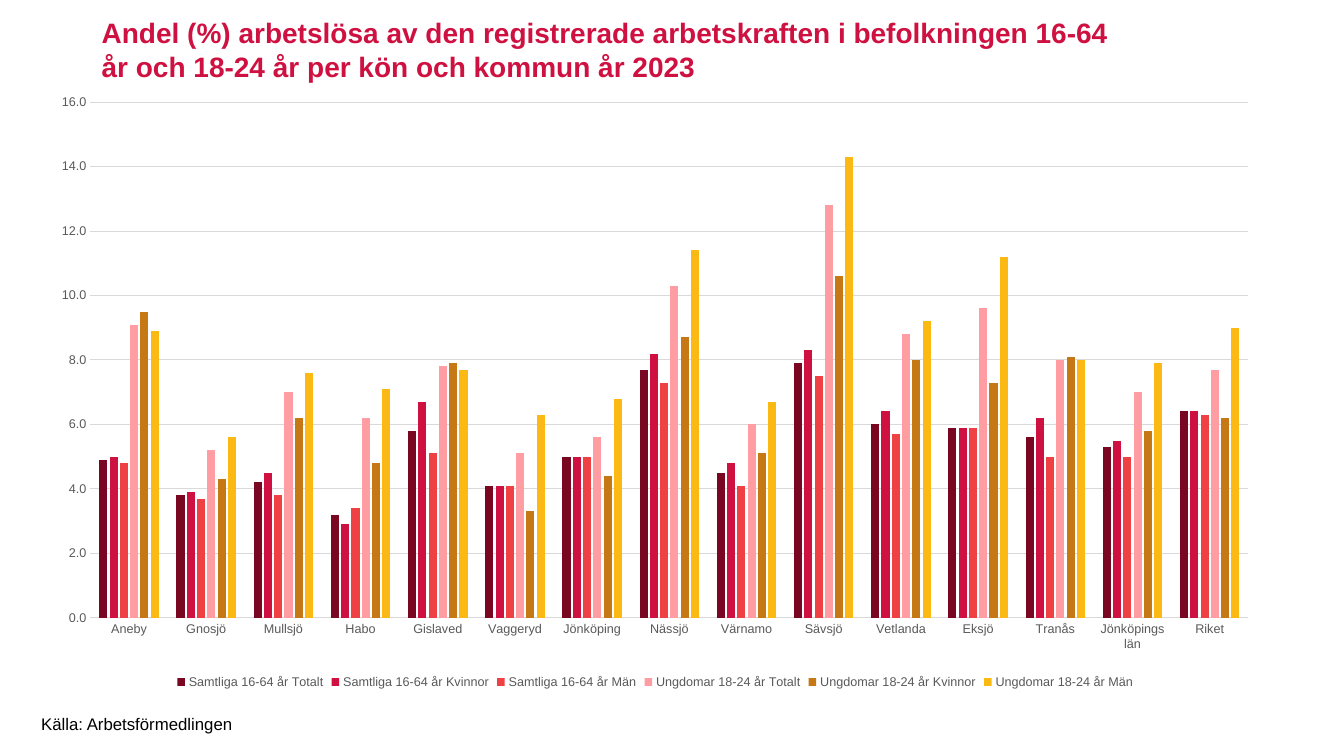
import pptx
import pptx.chart.data
import pptx.dml.color
import pptx.enum.chart
import pptx.enum.text
import pptx.util

Pt = pptx.util.Pt
RGBColor = pptx.dml.color.RGBColor

FONT = "Arial"
CRIMSON = RGBColor(0xCE, 0x11, 0x41)
BLACK = RGBColor(0x00, 0x00, 0x00)
LABEL_GREY = RGBColor(0x59, 0x59, 0x59)
LINE_GREY = RGBColor(0xD9, 0xD9, 0xD9)
WINE = RGBColor(0x79, 0x07, 0x21)
RED = RGBColor(0xEF, 0x40, 0x44)
PINK = RGBColor(0xFF, 0x9D, 0xA2)
OCHRE = RGBColor(0xC5, 0x78, 0x13)
YELLOW = RGBColor(0xFD, 0xB9, 0x13)

MUNICIPALITIES = [
    "Aneby", "Gnosjö", "Mullsjö", "Habo", "Gislaved", "Vaggeryd", "Jönköping", "Nässjö",
    "Värnamo", "Sävsjö", "Vetlanda", "Eksjö", "Tranås", "Jönköpings län", "Riket",
]
UNEMPLOYMENT = [
    ("Samtliga 16-64 år Totalt", WINE,
     [4.9, 3.8, 4.2, 3.2, 5.8, 4.1, 5, 7.7, 4.5, 7.9, 6, 5.9, 5.6, 5.3, 6.4]),
    ("Samtliga 16-64 år Kvinnor", CRIMSON,
     [5, 3.9, 4.5, 2.9, 6.7, 4.1, 5, 8.2, 4.8, 8.3, 6.4, 5.9, 6.2, 5.5, 6.4]),
    ("Samtliga 16-64 år Män", RED,
     [4.8, 3.7, 3.8, 3.4, 5.1, 4.1, 5, 7.3, 4.1, 7.5, 5.7, 5.9, 5, 5, 6.3]),
    ("Ungdomar 18-24 år Totalt", PINK,
     [9.1, 5.2, 7, 6.2, 7.8, 5.1, 5.6, 10.3, 6, 12.8, 8.8, 9.6, 8, 7, 7.7]),
    ("Ungdomar 18-24 år Kvinnor", OCHRE,
     [9.5, 4.3, 6.2, 4.8, 7.9, 3.3, 4.4, 8.7, 5.1, 10.6, 8, 7.3, 8.1, 5.8, 6.2]),
    ("Ungdomar 18-24 år Män", YELLOW,
     [8.9, 5.6, 7.6, 7.1, 7.7, 6.3, 6.8, 11.4, 6.7, 14.3, 9.2, 11.2, 8, 7.9, 9]),
]

deck = pptx.Presentation()
deck.slide_width, deck.slide_height = Pt(960), Pt(540)
page = deck.slides.add_slide(deck.slide_layouts[6])


def add_text(text, left, top, width, height, *, size, color, bold=False,
             anchor=pptx.enum.text.MSO_ANCHOR.TOP):
    box = page.shapes.add_textbox(Pt(left), Pt(top), Pt(width), Pt(height))
    box.text_frame.word_wrap = True
    box.text_frame.vertical_anchor = anchor
    span = box.text_frame.paragraphs[0].add_run()
    span.text = text
    style_font(span.font, size, color, bold)


def style_font(font, size, color, bold=False):
    font.name, font.size, font.bold = FONT, Pt(size), bold
    font.color.rgb = color


# Unemployment chart
chart_data = pptx.chart.data.CategoryChartData(number_format="0.0")
chart_data.categories = MUNICIPALITIES
for name, color, values in UNEMPLOYMENT:
    chart_data.add_series(name, values)
chart = page.shapes.add_chart(
    pptx.enum.chart.XL_CHART_TYPE.COLUMN_CLUSTERED,
    Pt(26.6), Pt(59), Pt(882.7), Pt(436.3), chart_data).chart
chart.has_title = False
style_font(chart.font, 10, BLACK)

# Columns
plot = chart.plots[0]
plot.vary_by_categories = False
plot.gap_width, plot.overlap = 219, -27
for series, (name, color, values) in zip(plot.series, UNEMPLOYMENT):
    series.format.fill.solid()
    series.format.fill.fore_color.rgb = color
    series.invert_if_negative = False

# Axes and gridlines
for axis in (chart.category_axis, chart.value_axis):
    axis.major_tick_mark = axis.minor_tick_mark = pptx.enum.chart.XL_TICK_MARK.NONE
    style_font(axis.tick_labels.font, 9, LABEL_GREY)
chart.value_axis.minimum_scale, chart.value_axis.maximum_scale = 0, 16
chart.value_axis.major_unit = 2
chart.value_axis.tick_labels.number_format = "0.0"
chart.value_axis.tick_labels.number_format_is_linked = False
chart.value_axis.format.line.fill.background()
for line in (chart.category_axis.format.line, chart.value_axis.major_gridlines.format.line):
    line.color.rgb = LINE_GREY
    line.width = Pt(0.75)

# Legend
chart.has_legend = True
chart.legend.position = pptx.enum.chart.XL_LEGEND_POSITION.BOTTOM
chart.legend.include_in_layout = False
style_font(chart.legend.font, 9, LABEL_GREY)

# Title and source
add_text("Andel (%) arbetslösa av den registrerade arbetskraften i befolkningen 16-64 år "
         "och 18-24 år per kön och kommun år 2023",
         65.5, 11.5, 737.3, 47.5, size=20, color=CRIMSON, bold=True,
         anchor=pptx.enum.text.MSO_ANCHOR.MIDDLE)
add_text("Källa: Arbetsförmedlingen", 22.3, 506.2, 175.7, 21.6, size=12, color=BLACK)

deck.save("out.pptx")
